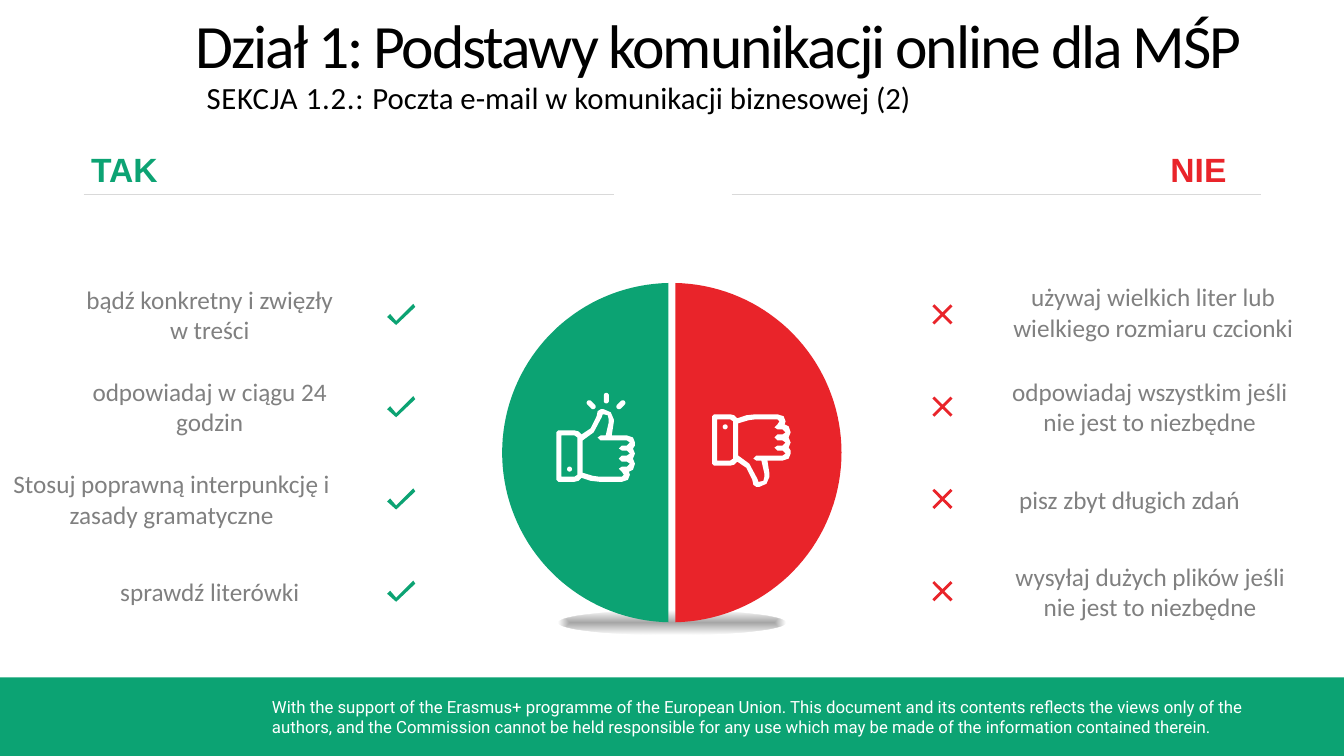
import math
from dataclasses import dataclass

from pptx import Presentation
from pptx.dml.color import RGBColor
from pptx.enum.shapes import MSO_CONNECTOR, MSO_SHAPE
from pptx.enum.text import MSO_ANCHOR, MSO_AUTO_SIZE, PP_ALIGN
from pptx.oxml import parse_xml
from pptx.oxml.ns import nsdecls
from pptx.util import Pt

LEFT, CENTER = PP_ALIGN.LEFT, PP_ALIGN.CENTER
TOP, MIDDLE = MSO_ANCHOR.TOP, MSO_ANCHOR.MIDDLE
NO_AUTOFIT = MSO_AUTO_SIZE.NONE
STRAIGHT = MSO_CONNECTOR.STRAIGHT
OVAL, RECTANGLE = MSO_SHAPE.OVAL, MSO_SHAPE.RECTANGLE
ROUNDED = MSO_SHAPE.ROUNDED_RECTANGLE


@dataclass(frozen=True)
class Theme:
    green: str = "0CA373"
    red: str = "E9242A"
    gray: str = "808080"
    rule: str = "D9D9D9"
    white: str = "FFFFFF"
    black: str = "000000"
    body_font: str = "Calibri"
    heading_font: str = "Arial"
    footer_font: str = "Roboto"
    title_size: int = 44
    section_size: int = 22
    heading_size: int = 24
    advice_size: int = 18
    footer_size: int = 12


THEME = Theme()
ICON_UNIT = Pt(0.72)
DISC_UNIT = Pt(0.01)
ROW_TOP, ROW_PITCH = 224.6, 65.9

TICK = [(9, 17), (3, 10), (0, 13), (9, 21), (28, 3), (26, 0)]
CROSS = [(20, 2), (18, 0), (10, 8), (2, 0), (0, 2), (8, 10),
         (0, 18), (2, 20), (10, 12), (18, 20), (20, 18), (12, 10)]
HAND_HEIGHT = 72
HAND_EDGE = [
    (76, 39), (78, 36), (78, 33), (76, 28), (70, 26), (55, 26), (57, 13),
    (57, 10), (54, 3), (47, 0), (44, 0), (41, 2), (40, 7), (34, 19), (25, 25),
    (22, 22), (18, 21), (2, 21), (0, 23), (0, 70), (2, 72), (18, 72), (22, 71),
    (25, 68), (34, 71), (43, 72), (65, 72), (71, 70), (73, 65), (72, 62),
    (76, 60), (78, 54), (76, 49), (78, 44)]
CUFF_HOLE = [(21, 65), (18, 67), (5, 67), (5, 26), (18, 26), (21, 28)]
PALM_HOLE = [
    (65, 41), (70, 41), (73, 44), (70, 46), (65, 46), (62, 49), (65, 52),
    (70, 52), (73, 54), (70, 57), (65, 57), (62, 59), (65, 62), (67, 65),
    (65, 67), (43, 67), (36, 66), (26, 63), (26, 31), (37, 23), (45, 8),
    (46, 5), (47, 5), (51, 6), (52, 10), (52, 13), (49, 26), (44, 26),
    (41, 28), (44, 31), (70, 31), (73, 33), (70, 36), (65, 36), (62, 39)]

# Each entry: text, box width, number of lines, upward shift
DO_ADVICE = [
    ("bądź konkretny i zwięzły w treści", 190.8, 2, 0),
    ("odpowiadaj w ciągu 24 godzin", 190.8, 2, 0),
    ("Stosuj poprawną interpunkcję i zasady gramatyczne", 245.2, 2, 0),
    ("sprawdź literówki", 190.8, 1, 0)]
DONT_ADVICE = [
    ("używaj wielkich liter lub wielkiego rozmiaru czcionki", 224.6, 2, 1.8),
    ("odpowiadaj wszystkim jeśli nie jest to niezbędne", 219.6, 2, 0),
    ("pisz zbyt długich zdań", 190.8, 1, 0),
    ("wysyłaj dużych plików jeśli nie jest to niezbędne", 220.3, 2, 0)]
FOOTER = ("With the support of the Erasmus+ programme of the European Union. "
          "This document and its contents reflects the views only of the authors, "
          "and the Commission cannot be held responsible for any use which may be "
          "made of the information contained therein.")


def paint(shape, color):
    shape.shadow.inherit = False
    shape.fill.solid()
    shape.fill.fore_color.rgb = RGBColor.from_string(color)
    shape.line.fill.background()


def format_font(font, name, size, color, bold=False):
    font.name, font.size, font.bold = name, Pt(size), bold
    font.color.rgb = RGBColor.from_string(color)


def add_preset(slide, kind, left, top, width, height, color):
    shape = slide.shapes.add_shape(kind, Pt(left), Pt(top), Pt(width), Pt(height))
    paint(shape, color)
    return shape


def add_outline(slide, contours, left, top, unit, color):
    """Fill closed contours given in units; inner contours become holes."""
    first, *others = contours
    builder = slide.shapes.build_freeform(*first[0], scale=unit)
    builder.add_line_segments(first[1:], close=True)
    for contour in others:
        builder.move_to(*contour[0])
        builder.add_line_segments(contour[1:], close=True)
    paint(builder.convert_to_shape(Pt(left), Pt(top)), color)


def add_text(slide, text, left, top, width, height, font, align=CENTER,
             anchor=MIDDLE, wrap=True):
    box = slide.shapes.add_textbox(Pt(left), Pt(top), Pt(width), Pt(height))
    frame = box.text_frame
    frame.text = text
    frame.word_wrap, frame.vertical_anchor = wrap, anchor
    paragraph = frame.paragraphs[0]
    paragraph.alignment = align
    format_font(paragraph.runs[0].font, *font)


def fill_placeholder(placeholder, left, top, width, height, size, parts):
    """Set one unbulleted line from (text, letter spacing) parts."""
    placeholder.left, placeholder.top = Pt(left), Pt(top)
    placeholder.width, placeholder.height = Pt(width), Pt(height)
    frame = placeholder.text_frame
    frame.margin_left = frame.margin_right = frame.margin_bottom = 0
    frame.margin_top = Pt(1)
    frame.auto_size, frame.vertical_anchor = NO_AUTOFIT, TOP
    paragraph = frame.paragraphs[0]
    properties = paragraph._p.get_or_add_pPr()
    properties.set("marL", "0")
    properties.set("indent", "0")
    properties.append(parse_xml(f"<a:buNone {nsdecls('a')}/>"))
    paragraph.alignment, paragraph.space_before = LEFT, Pt(0)
    for text, spacing in parts:
        run = paragraph.add_run()
        run.text = text
        format_font(run.font, THEME.body_font, size, THEME.black)
        run._r.get_or_add_rPr().set("spc", str(round(spacing * 100)))


def add_rule(slide, left, right, top):
    rule = slide.shapes.add_connector(STRAIGHT, Pt(left), Pt(top), Pt(right), Pt(top))
    rule.line.width = Pt(0.75)
    rule.line.color.rgb = RGBColor.from_string(THEME.rule)
    rule._element.spPr.append(parse_xml(f"<a:effectLst {nsdecls('a')}/>"))


def add_disc_shadow(slide):
    shadow = add_preset(slide, OVAL, 398.9, 436.3, 162, 16.6, THEME.gray)
    stops = "".join(
        f'<a:gs pos="{position}"><a:srgbClr val="{THEME.gray}">'
        f'<a:alpha val="{alpha}"/></a:srgbClr></a:gs>'
        for position, alpha in ((0, 70000), (100000, 0)))
    gradient = parse_xml(
        f'<a:gradFill {nsdecls("a")} rotWithShape="1"><a:gsLst>{stops}</a:gsLst>'
        '<a:path path="shape"><a:fillToRect l="50000" t="50000" r="50000" '
        'b="50000"/></a:path></a:gradFill>')
    properties = shadow._element.spPr
    properties.replace(properties.find("{*}solidFill"), gradient)


def add_half_disc(slide, side, color):
    """Draw the half on the given side: -1 is left, 1 is right."""
    radius, gap, steps = 12120, 250, 72
    limit = math.acos(gap / radius)
    angles = [limit * (2 * step / steps - 1) for step in range(steps + 1)]
    arc = [(round(side * radius * math.cos(angle)), round(radius * math.sin(angle)))
           for angle in angles]
    add_outline(slide, [arc], 479.9, 323.3, DISC_UNIT, color)


def add_hand(slide, left, top, flipped=False):
    contours = [HAND_EDGE, CUFF_HOLE, PALM_HOLE]
    button_top = top + 41
    if flipped:
        contours = [[(x, HAND_HEIGHT - y) for x, y in contour] for contour in contours]
        button_top = top + 7.2
    add_outline(slide, contours, left, top, ICON_UNIT, THEME.white)
    add_preset(slide, OVAL, left + 7.6, button_top, 3.6, 3.6, THEME.white)


def add_sparks(slide):
    for center_x, center_y, angle in ((422.3, 289.1, -45), (433.1, 284.4, 0),
                                      (443.5, 289.1, 45)):
        spark = add_preset(slide, ROUNDED, center_x - 1.85, center_y - 3.8, 3.7, 7.6,
                           THEME.white)
        spark.adjustments[0] = 0.5
        spark.rotation = angle


def add_advice(slide, entries, icon, icon_left, icon_height, color, text_left=None,
               text_right=None):
    font = (THEME.body_font, THEME.advice_size, THEME.gray)
    for row, (text, width, lines, shift) in enumerate(entries):
        center = ROW_TOP + row * ROW_PITCH
        add_outline(slide, [icon], icon_left, center - icon_height / 2, ICON_UNIT, color)
        left = text_left if text_right is None else text_right - width
        height = 7.2 + 22 * lines
        add_text(slide, text, left, center - height / 2 - shift, width, height, font)


def main():
    presentation = Presentation()
    presentation.slide_width, presentation.slide_height = Pt(960), Pt(540)
    slide = presentation.slides.add_slide(presentation.slide_layouts[1])
    title, section = slide.placeholders
    fill_placeholder(title, 139.7, 3.6, 820, 54, THEME.title_size,
                     [("Dział 1: Podstawy komunikacji online dla MŚP", -1.5)])
    fill_placeholder(section, 147.6, 55.3, 606.2, 28.1, THEME.section_size,
                     [("SEKCJA 1.2.: ", 0.5),
                      ("Poczta e-mail w komunikacji biznesowej (2)", 0)])

    add_preset(slide, RECTANGLE, 0, 483.8, 960, 56.2, THEME.green)
    add_text(slide, FOOTER, 187.2, 493.9, 750.2, 36,
             (THEME.footer_font, THEME.footer_size, THEME.white), LEFT, TOP)

    for heading, left, width, color in (("TAK", 57.6, 62.6, THEME.green),
                                        ("NIE", 828.7, 54.7, THEME.red)):
        add_text(slide, heading, left, 103, width, 36,
                 (THEME.heading_font, THEME.heading_size, color, True), wrap=False)
    add_rule(slide, 59.8, 438.5, 139)
    add_rule(slide, 522.7, 900.7, 139)

    add_disc_shadow(slide)
    add_half_disc(slide, -1, THEME.green)
    add_half_disc(slide, 1, THEME.red)
    add_hand(slide, 397.4, 292.3)
    add_sparks(slide)
    add_hand(slide, 508.6, 295.9, flipped=True)

    add_advice(slide, DO_ADVICE, TICK, 276.5, 15.1, THEME.green, text_right=245.2)
    add_advice(slide, DONT_ADVICE, CROSS, 666, 14.4, THEME.red, text_left=711.4)
    presentation.save("out.pptx")


if __name__ == "__main__":
    main()
